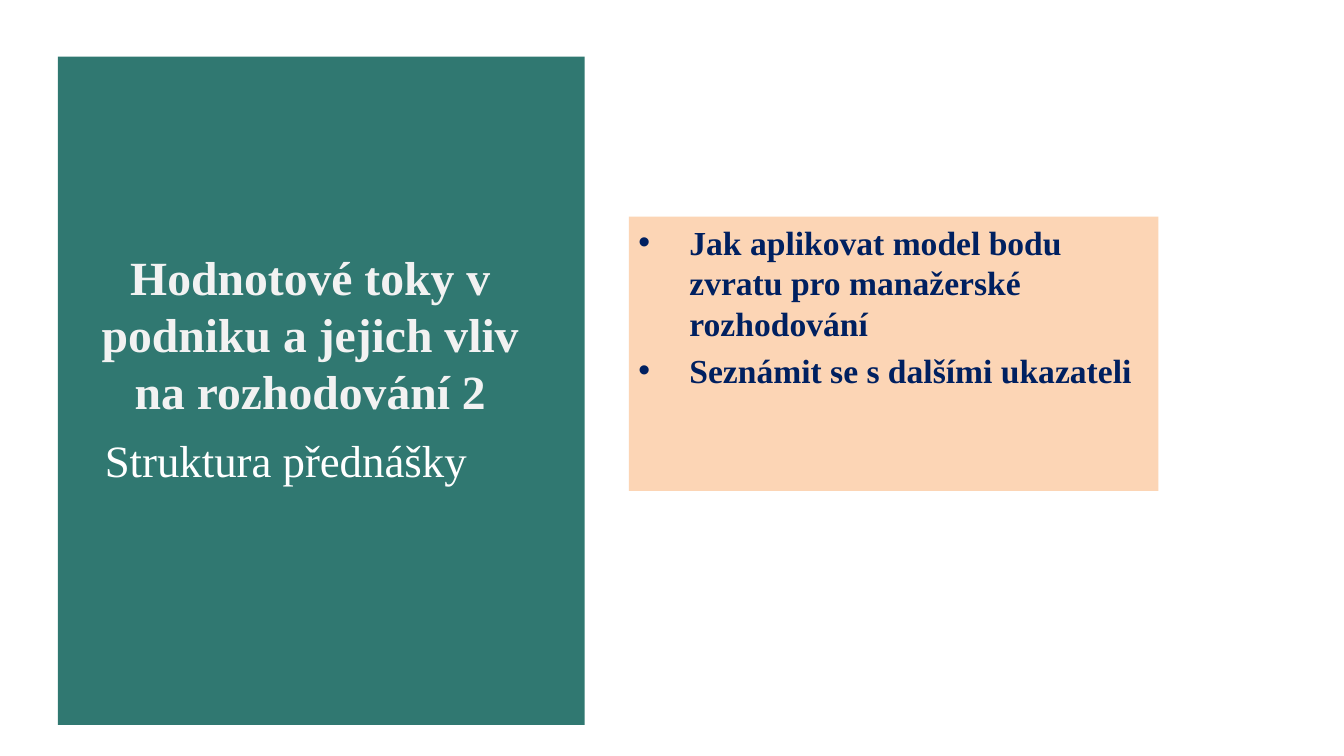
from dataclasses import dataclass
from typing import Any

import pptx
import pptx.dml.color
import pptx.enum.shapes
import pptx.enum.text
import pptx.oxml.ns
import pptx.util
from lxml import etree

ALIGN = pptx.enum.text.PP_ALIGN
ANCHOR = pptx.enum.text.MSO_ANCHOR
SLIDE_WIDTH = pptx.util.Inches(10)
SLIDE_HEIGHT = SLIDE_WIDTH * 9 // 16
INSETS = {"margin_left": 0.07, "margin_top": 0.04, "margin_right": 0.07, "margin_bottom": 0.04}
BULLET_INDENT = pptx.util.Inches(0.38)


@dataclass
class Block:
    left: float
    top: float
    width: float
    height: float
    lines: tuple[str, ...] = ()
    fill: str | None = None
    color: str = "FFFFFF"
    size: float = 18
    bold: bool = False
    bullets: bool = False
    align: Any = ALIGN.LEFT
    anchor: Any = ANCHOR.TOP


BLOCKS = [
    Block(4.3, 7.5, 39.2, 88.4, fill="307871"),
    Block(5.5, 17.1, 35.2, 39.1, ("Hodnotové toky v podniku a jejich vliv na rozhodování 2",),
          color="F2F2F2", size=25.5, bold=True, align=ALIGN.CENTER, anchor=ANCHOR.BOTTOM),
    Block(46.8, 28.65, 39.4, 36.3,
          ("Jak aplikovat model bodu zvratu pro manažerské rozhodování",
           "Seznámit se s dalšími ukazateli"),
          fill="FCD5B5", color="002060", bold=True, bullets=True),
    Block(7.1, 56.5, 29.6, 8.5, ("Struktura přednášky",), size=24),
]


def rgb(value: str) -> pptx.dml.color.RGBColor:
    return pptx.dml.color.RGBColor.from_string(value)


def apply(target: Any, values: dict[str, Any]) -> None:
    for name, value in values.items():
        setattr(target, name, value)


def add_bullet(p: Any) -> None:
    props = p._p.get_or_add_pPr()
    props.set("marL", str(BULLET_INDENT))
    props.set("indent", str(-BULLET_INDENT))
    font = etree.SubElement(props, pptx.oxml.ns.qn("a:buFont"))
    font.set("typeface", "Arial")
    etree.SubElement(props, pptx.oxml.ns.qn("a:buChar")).set("char", "•")


def write_text(tf: Any, block: Block) -> None:
    apply(tf, {"word_wrap": True, "vertical_anchor": block.anchor})
    apply(tf, {side: pptx.util.Inches(gap) for side, gap in INSETS.items()})
    for i, line in enumerate(block.lines):
        p = tf.add_paragraph() if i else tf.paragraphs[0]
        p.alignment = block.align
        if i:
            p.space_before = pptx.util.Pt(block.size * 0.2)
        if block.bullets:
            add_bullet(p)
        r = p.add_run()
        r.text = line
        apply(r.font, {"name": "Times New Roman", "size": pptx.util.Pt(block.size), "bold": block.bold})
        r.font.color.rgb = rgb(block.color)


def draw(s: Any, block: Block) -> None:
    box = [int(share / 100 * side) for share, side in (
        (block.left, SLIDE_WIDTH), (block.top, SLIDE_HEIGHT),
        (block.width, SLIDE_WIDTH), (block.height, SLIDE_HEIGHT))]
    if block.fill:
        sp = s.shapes.add_shape(pptx.enum.shapes.MSO_SHAPE.RECTANGLE, *box)
        sp.shadow.inherit = False
        sp.fill.solid()
        sp.fill.fore_color.rgb = rgb(block.fill)
        sp.line.fill.background()
    else:
        sp = s.shapes.add_textbox(*box)
    if block.lines:
        write_text(sp.text_frame, block)


def main() -> None:
    prs = pptx.Presentation()
    apply(prs, {"slide_width": SLIDE_WIDTH, "slide_height": SLIDE_HEIGHT})
    s = prs.slides.add_slide(prs.slide_layouts[6])
    for block in BLOCKS:
        draw(s, block)
    prs.save("out.pptx")


if __name__ == "__main__":
    main()
